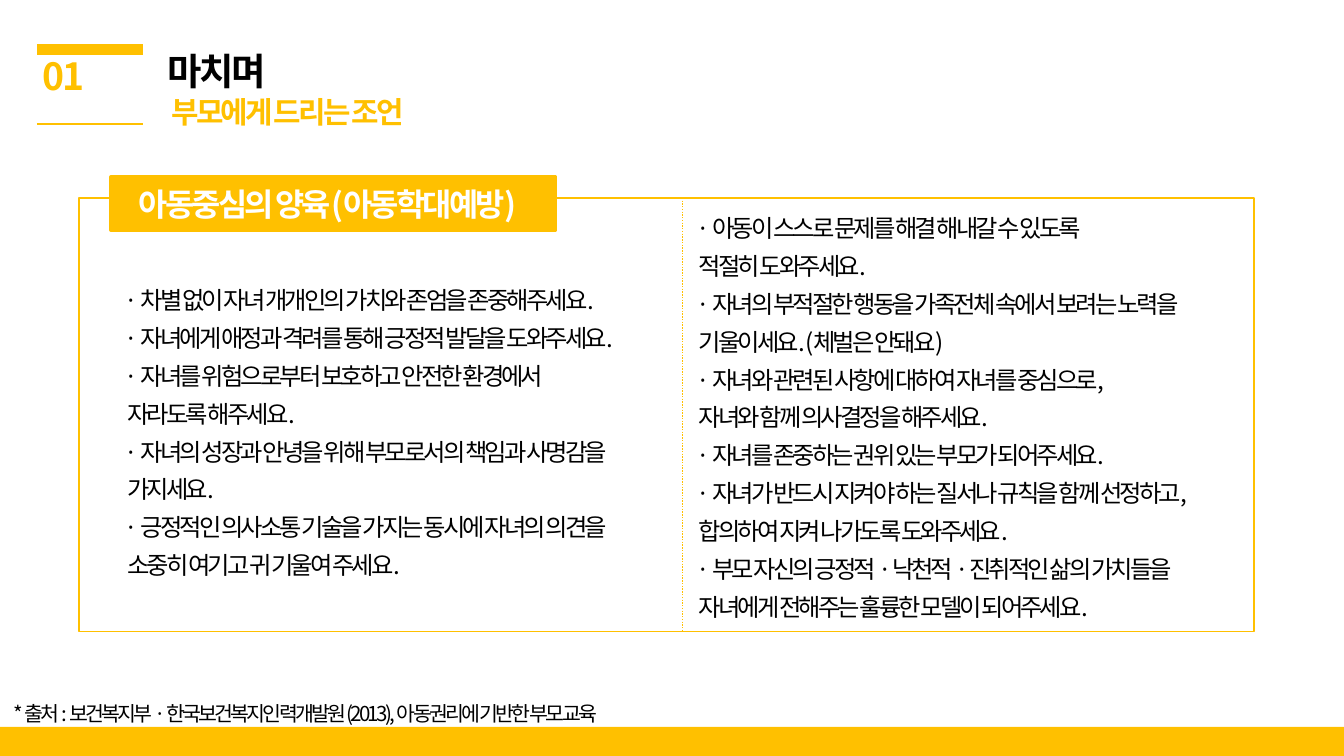
"""Builds the closing slide with advice for parents on child-centred care."""
from pptx import Presentation
from pptx import util as u
from pptx.dml import color
from pptx.enum import dml, shapes, text
from pptx.oxml import ns, xmlchemy

FONT = "Noto Sans CJK KR"
COLOURS = {"accent": "FFC000", "ink": "000000", "paper": "FFFFFF"}
LEFT_ADVICE = [
    "· 차별 없이 자녀 개개인의 가치와 존엄을 존중해주세요.",
    "· 자녀에게 애정과 격려를 통해 긍정적 발달을 도와주세요.",
    "· 자녀를 위험으로부터 보호하고 안전한 환경에서",
    "자라도록 해주세요.",
    "· 자녀의 성장과 안녕을 위해 부모로서의 책임과 사명감을",
    "가지세요.",
    "· 긍정적인 의사소통 기술을 가지는 동시에 자녀의 의견을",
    "소중히 여기고 귀 기울여 주세요.",
]
RIGHT_ADVICE = [
    "· 아동이 스스로 문제를 해결 해내갈 수 있도록",
    "적절히 도와주세요.",
    "· 자녀의 부적절한 행동을 가족전체 속에서 보려는 노력을",
    "기울이세요. (체벌은 안돼요)",
    "· 자녀와 관련된 사항에 대하여 자녀를 중심으로,",
    "자녀와 함께 의사결정을 해주세요.",
    "· 자녀를 존중하는 권위 있는 부모가 되어주세요.",
    "· 자녀가 반드시 지켜야 하는 질서나 규칙을 함께 선정하고,",
    "합의하여 지켜 나가도록 도와주세요.",
    "· 부모 자신의 긍정적 ·낙천적 ·진취적인 삶의 가치들을",
    "자녀에게 전해주는 훌륭한 모델이 되어주세요.",
]


def rgb(name):
    return color.RGBColor.from_string(COLOURS[name])


def place(box, left, top, width, height):
    box.left, box.top, box.width, box.height = map(u.Cm, (left, top, width, height))


def prepare_frame(box, anchor=text.MSO_ANCHOR.TOP):
    frame = box.text_frame
    frame.word_wrap = True
    frame.auto_size = text.MSO_AUTO_SIZE.NONE
    frame.vertical_anchor = anchor
    return frame


def write_para(para, words, size, colour, bold=False, align=text.PP_ALIGN.LEFT,
               spacing=1.0, indent=0):
    props = para._p.get_or_add_pPr()
    props.set("marL", str(u.Cm(indent)))
    props.set("indent", "0")
    props.append(xmlchemy.OxmlElement("a:buNone"))
    para.alignment = align
    para.line_spacing = spacing
    para.space_before = u.Pt(0)
    span = para.add_run()
    span.text = words
    span.font.name = FONT
    span.font.size = u.Pt(size)
    span.font.bold = bold
    span.font.color.rgb = rgb(colour)
    run_props = span._r.get_or_add_rPr()
    run_props.set("spc", "-150")
    east_asian = xmlchemy.OxmlElement("a:ea")
    east_asian.set("typeface", FONT)
    run_props.find(ns.qn("a:latin")).addnext(east_asian)


def fill_list(box, lines):
    frame = prepare_frame(box)
    for index, line in enumerate(lines):
        para = frame.add_paragraph() if index else frame.paragraphs[0]
        indent = 0 if line.startswith("·") else 0.05
        write_para(para, line, 13, "ink", spacing=1.3, indent=indent)


def add_label(page, bounds, words, size, colour, **style):
    box = page.shapes.add_textbox(*map(u.Cm, bounds))
    write_para(prepare_frame(box).paragraphs[0], words, size, colour, **style)


def add_rectangle(page, bounds, fill=None, line_width=0):
    box = page.shapes.add_shape(shapes.MSO_SHAPE.RECTANGLE, *map(u.Cm, bounds))
    box.shadow.inherit = False
    if fill:
        box.fill.solid()
        box.fill.fore_color.rgb = rgb(fill)
    else:
        box.fill.background()
    if line_width:
        box.line.color.rgb = rgb("accent")
        box.line.width = u.Pt(line_width)
    else:
        box.line.fill.background()
    return box


def add_rule(page, start, end, width, dash=None):
    rule = page.shapes.add_connector(
        shapes.MSO_CONNECTOR.STRAIGHT, *map(u.Cm, start + end))
    rule.line.color.rgb = rgb("accent")
    rule.line.width = u.Pt(width)
    if dash:
        rule.line.dash_style = dash
    rule._element.spPr.append(xmlchemy.OxmlElement("a:effectLst"))


def main():
    deck = Presentation()
    deck.slide_width, deck.slide_height = u.Cm(25.4), u.Cm(14.29)
    page = deck.slides.add_slide(deck.slide_layouts[3])
    title, left_list, right_list = page.placeholders

    for top, width in ((0.94, 6), (2.34, 1)):
        add_rule(page, (0.7, top), (2.7, top), width)
    add_label(page, (0.1, 0.89, 2.2, 1.11), "01", 20, "accent",
              bold=True, align=text.PP_ALIGN.CENTER)

    place(title, 2.92, 0.79, 18.2, 1.8)
    heading = prepare_frame(title)
    write_para(heading.paragraphs[0], "마치며", 20, "ink", bold=True)
    write_para(heading.add_paragraph(), "부모에게 드리는 조언", 16, "accent",
               bold=True, indent=0.07)

    add_rectangle(page, (1.5, 3.74, 22.2, 8.2), line_width=1)
    add_rule(page, (12.9, 3.74), (12.9, 11.94), 0.75, dml.MSO_LINE.ROUND_DOT)
    banner = add_rectangle(page, (2.1, 3.35, 8.4, 1), "accent", 2)
    banner.text_frame.margin_right = u.Cm(0.46)
    caption = prepare_frame(banner, text.MSO_ANCHOR.MIDDLE)
    write_para(caption.paragraphs[0], "아동중심의 양육(아동학대예방)", 17, "paper",
               bold=True, align=text.PP_ALIGN.CENTER)

    place(left_list, 2.1, 5.1, 11.2, 6.05)
    fill_list(left_list, LEFT_ADVICE)
    place(right_list, 12.9, 3.74, 11.8, 8.2)
    fill_list(right_list, RIGHT_ADVICE)

    add_rectangle(page, (0, 13.74, 25.4, 0.55), "accent")
    add_label(page, (0, 13.13, 12.5, 0.73),
              "* 출처 : 보건복지부 ·한국보건복지인력개발원(2013), 아동권리에 기반한 부모교육",
              11, "ink")
    deck.save("out.pptx")


if __name__ == "__main__":
    main()
